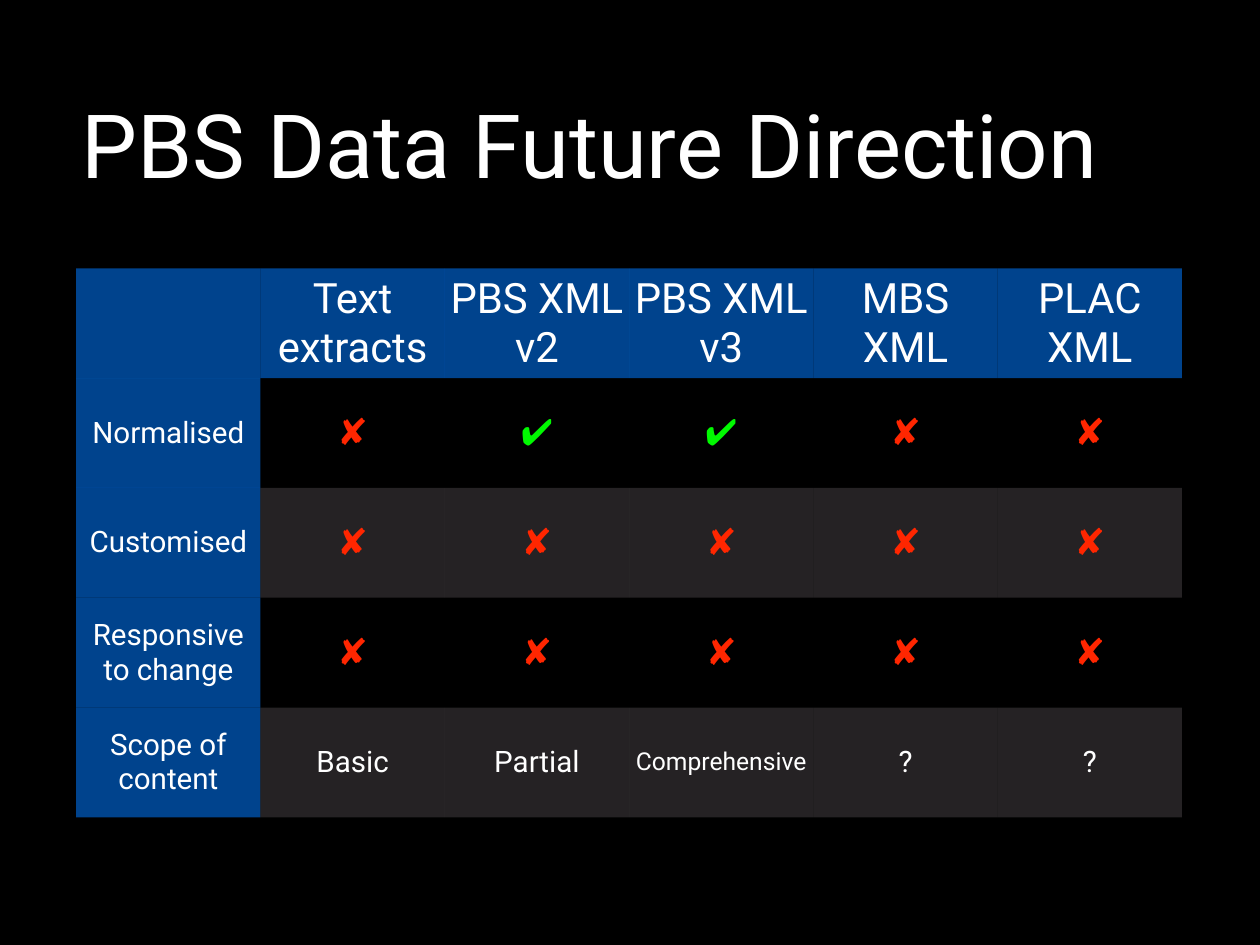
from lxml.etree import SubElement
from pptx import Presentation
from pptx.dml.color import RGBColor
from pptx.enum.text import MSO_ANCHOR, MSO_AUTO_SIZE, PP_ALIGN
from pptx.oxml.ns import qn
from pptx.util import Inches, Pt

FONT = "Roboto"
BLACK = RGBColor(0x00, 0x00, 0x00)
WHITE = RGBColor(0xFF, 0xFF, 0xFF)
BLUE = RGBColor(0x00, 0x71, 0xEB)
GREY = RGBColor(0x67, 0x61, 0x64)
RED = RGBColor(0xFF, 0x26, 0x00)
GREEN = RGBColor(0x00, 0xF9, 0x00)

INSET = Inches(0.06)
COLUMN_WIDTH = Inches(2.08)
ROW_HEIGHT = Inches(1.24)
PLAIN_TABLE_STYLE = "{2D5ABB26-0587-4C30-8999-92F81FD0307C}"

CROSS = "✘"
TICK = "✔︎"
ROWS = [
    ["", "Text extracts", "PBS XML v2", "PBS XML v3", "MBS XML", "PLAC XML"],
    ["Normalised", CROSS, TICK, TICK, CROSS, CROSS],
    ["Customised"] + [CROSS] * 5,
    ["Responsive to change"] + [CROSS] * 5,
    ["Scope of content", "Basic", "Partial", "Comprehensive", "?", "?"],
]
MARK_COLORS = {CROSS: RED, TICK: GREEN}


def add_run(paragraph, text, size, color):
    run = paragraph.add_run()
    run.text = text
    run.font.name = FONT
    run.font.size = Pt(size)
    run.font.color.rgb = color


def set_insets(box):
    box.margin_left = box.margin_right = INSET
    box.margin_top = box.margin_bottom = INSET
    box.vertical_anchor = MSO_ANCHOR.MIDDLE


def fill_cell(cell, color, opacity):
    cell.fill.solid()
    cell.fill.fore_color.rgb = color
    color_element = cell.fill._xPr.find(".//" + qn("a:srgbClr"))
    SubElement(color_element, qn("a:alpha"), val=str(opacity * 1000))


def text_size(text, row_index):
    if row_index == 0:
        return 34
    if text in MARK_COLORS:
        return 30
    return 20 if text == "Comprehensive" else 24


def format_cell(cell, text, row_index, column_index):
    set_insets(cell)
    # Blue headings, grey on every second body row
    if row_index == 0 or column_index == 0:
        fill_cell(cell, BLUE, 60)
    elif row_index % 2 == 0:
        fill_cell(cell, GREY, 36)
    else:
        cell.fill.background()
    if text:
        paragraph = cell.text_frame.paragraphs[0]
        paragraph.alignment = PP_ALIGN.CENTER
        add_run(paragraph, text, text_size(text, row_index),
                MARK_COLORS.get(text, WHITE))


def add_title(slide, text):
    title = slide.shapes.title
    title.left, title.top = Inches(0.86), Inches(0.28)
    title.width, title.height = Inches(12.5), Inches(2.67)
    frame = title.text_frame
    set_insets(frame)
    frame.word_wrap = True
    frame.auto_size = MSO_AUTO_SIZE.NONE
    paragraph = frame.paragraphs[0]
    paragraph.alignment = PP_ALIGN.LEFT
    add_run(paragraph, text, 72, WHITE)


def add_comparison_table(slide):
    row_count, column_count = len(ROWS), len(ROWS[0])
    frame = slide.shapes.add_table(
        row_count, column_count, Inches(0.86), Inches(3.03),
        COLUMN_WIDTH * column_count, ROW_HEIGHT * row_count)
    table = frame.table
    table.horz_banding = False
    table._tbl.tblPr.find(qn("a:tableStyleId")).text = PLAIN_TABLE_STYLE
    for column in table.columns:
        column.width = COLUMN_WIDTH
    for row_index, texts in enumerate(ROWS):
        table.rows[row_index].height = ROW_HEIGHT
        for column_index, text in enumerate(texts):
            format_cell(table.cell(row_index, column_index), text,
                        row_index, column_index)


def main():
    presentation = Presentation()
    presentation.slide_width = Inches(14.22)
    presentation.slide_height = Inches(10.67)

    # Title Only layout on black
    slide = presentation.slides.add_slide(presentation.slide_layouts[5])
    slide.background.fill.solid()
    slide.background.fill.fore_color.rgb = BLACK

    add_title(slide, "PBS Data Future Direction")
    add_comparison_table(slide)
    presentation.save("out.pptx")


if __name__ == "__main__":
    main()
